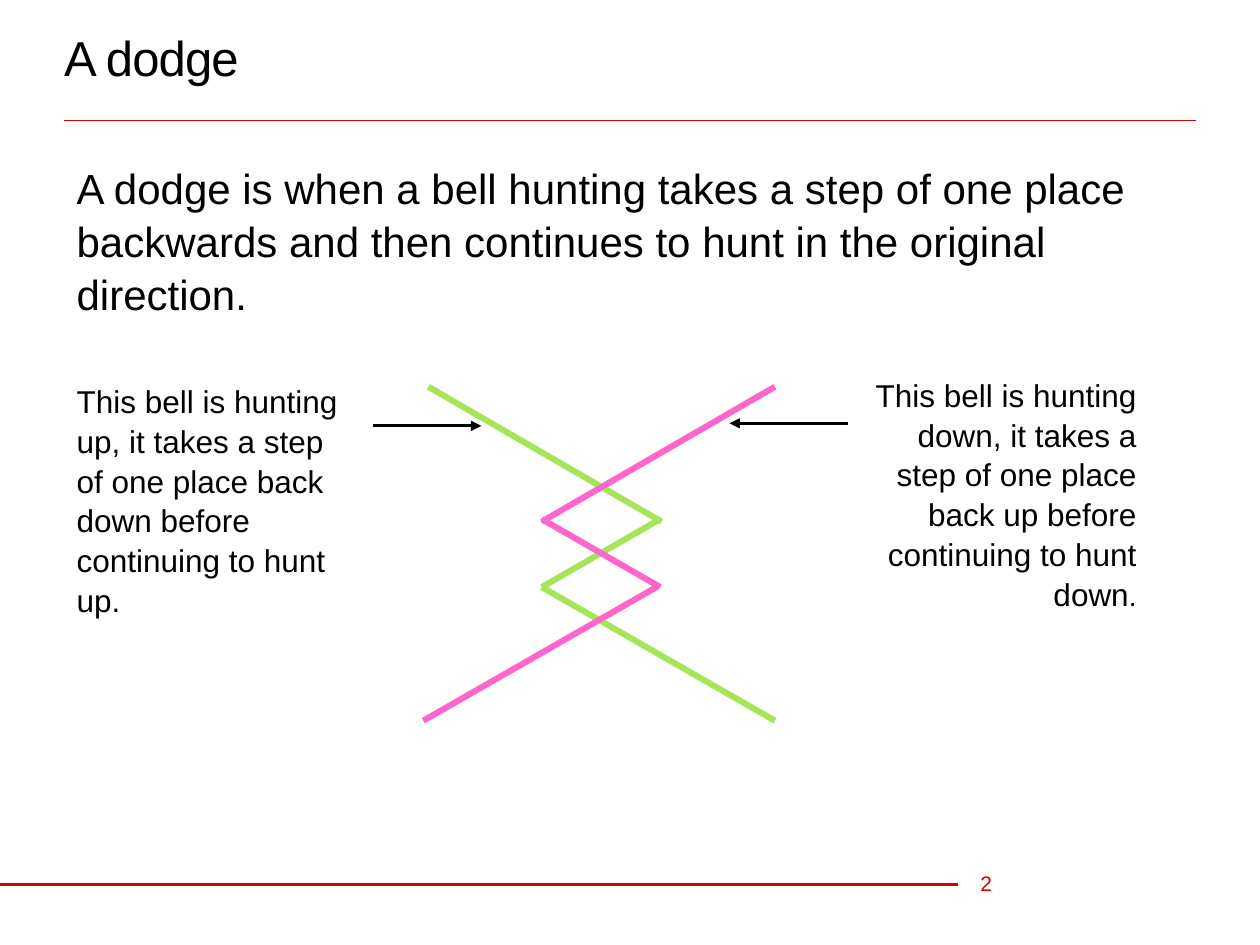
"""Build the slide that explains a dodge in bell ringing."""
from lxml import etree
from pptx import Presentation
from pptx.dml.color import RGBColor
from pptx.enum.shapes import MSO_CONNECTOR
from pptx.enum.text import MSO_ANCHOR, PP_ALIGN
from pptx.oxml.ns import qn
from pptx.util import Inches, Pt

STRAIGHT = MSO_CONNECTOR.STRAIGHT
TOP, MIDDLE = MSO_ANCHOR.TOP, MSO_ANCHOR.MIDDLE
LEFT, RIGHT = PP_ALIGN.LEFT, PP_ALIGN.RIGHT
RED, BLACK, GREEN, PINK = "D20000", "000000", "A6E559", "FF66CC"

presentation = Presentation()
presentation.slide_width = Inches(10)
presentation.slide_height = Inches(7.5)
slide = presentation.slides.add_slide(presentation.slide_layouts[6])


def add_line(start, end, color, width, arrow=False):
    line = slide.shapes.add_connector(STRAIGHT, *map(Inches, start + end))
    line.line.color.rgb = RGBColor.from_string(color)
    line.line.width = Pt(width)
    if arrow:
        etree.SubElement(line.line._get_or_add_ln(), qn("a:tailEnd"), type="triangle")
    etree.SubElement(line._element.spPr, qn("a:effectLst"))


def add_text(text, box, size, color=BLACK, inset=(0, 0), anchor=TOP, align=LEFT, spacing=1.05):
    frame = slide.shapes.add_textbox(*map(Inches, box)).text_frame
    frame.word_wrap = True
    frame.vertical_anchor = anchor
    frame.margin_left = frame.margin_right = Inches(inset[0])
    frame.margin_top = frame.margin_bottom = Inches(inset[1])
    paragraph = frame.paragraphs[0]
    paragraph.text = text
    paragraph.alignment = align
    paragraph.line_spacing = spacing
    paragraph.font.name = "Arial"
    paragraph.font.size = Pt(size)
    paragraph.font.color.rgb = RGBColor.from_string(color)
    return paragraph


add_line((0.51, 0.96), (9.49, 0.96), RED, 0.5)
add_line((0, 7.02), (7.6, 7.02), RED, 2)
add_text("2", (7.78, 6.81, 0.51, 0.4), 12, RED, anchor=MIDDLE, spacing=1)

title = add_text("A dodge", (0.51, 0.05, 8.98, 0.81), 28, anchor=MIDDLE, spacing=1)
title.runs[0]._r.get_or_add_rPr().set("spc", "-50")

hunting_down = add_text(
    "This bell is hunting down, it takes a step of one place back up before "
    "continuing to hunt down",
    (6.85, 2.97, 2.17, 2.12), 18, align=RIGHT)
full_stop = hunting_down.add_run()
full_stop.text = "."
full_stop.font.size = Pt(16)

bell_paths = [
    (GREEN, [((3.4, 3.07), (5.25, 4.14)), ((4.3, 4.66), (5.24, 4.12)), ((6.15, 5.72), (4.3, 4.66))]),
    (PINK, [((6.15, 3.07), (4.3, 4.14)), ((4.3, 4.12), (5.24, 4.66)), ((5.21, 4.66), (3.36, 5.72))]),
]
for color, steps in bell_paths:
    for start, end in steps:
        add_line(start, end, color, 3.5)

add_text(
    "A dodge is when a bell hunting takes a step of one place backwards and then "
    "continues to hunt in the original direction.",
    (0.51, 1.22, 8.98, 1.62), 24, inset=(0.1, 0.05))
add_text(
    "This bell is hunting up, it takes a step of one place back down before "
    "continuing to hunt up.",
    (0.51, 2.97, 2.32, 1.92), 18, inset=(0.1, 0.05))

add_line((2.96, 3.38), (3.82, 3.38), BLACK, 1.75, arrow=True)
add_line((6.73, 3.36), (5.79, 3.36), BLACK, 1.75, arrow=True)

presentation.save("out.pptx")
